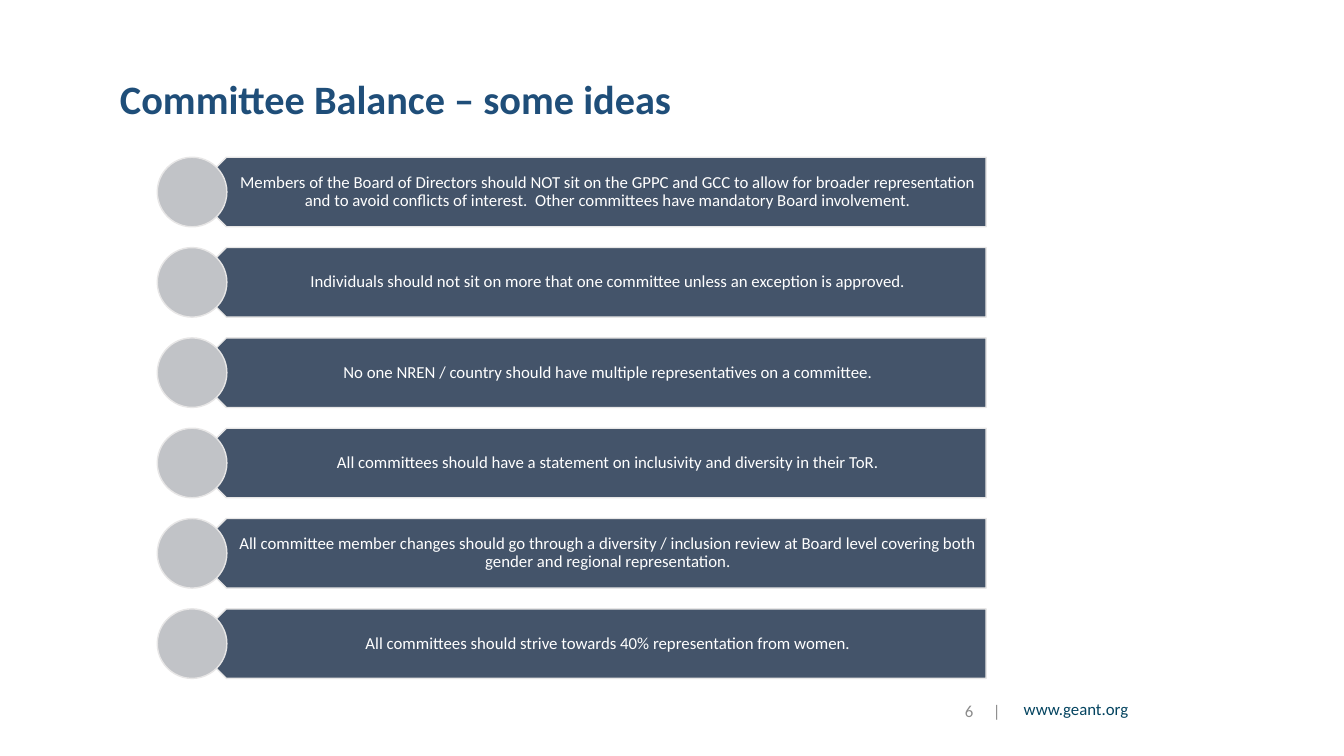
"""Build the committee balance slide: six ideas, each on a dark plate with a round marker."""
from dataclasses import dataclass

from lxml.etree import SubElement
from pptx import Presentation
from pptx.dml.color import RGBColor
from pptx.enum.shapes import MSO_SHAPE
from pptx.enum.text import MSO_ANCHOR, MSO_AUTO_SIZE, PP_ALIGN
from pptx.oxml.ns import qn
from pptx.util import Inches, Pt

TITLE = "Committee Balance – some ideas"
IDEAS = [
    "Members of the Board of Directors should NOT sit on the GPPC and GCC to allow for broader "
    "representation and to avoid conflicts of interest.  Other committees have mandatory Board involvement.",
    "Individuals should not sit on more that one committee unless an exception is approved.",
    "No one NREN / country should have multiple representatives on a committee.",
    "All committees should have a statement on inclusivity and diversity in their ToR.",
    "All committee member changes should go through a diversity / inclusion review at Board level "
    "covering both gender and regional representation.",
    "All committees should strive towards 40% representation from women.",
]
WEBSITE = "www.geant.org"
PAGE = "6\t|"
PAGE_TAB = 0.28


@dataclass(frozen=True)
class Theme:
    font: str = "Calibri"
    title: str = "1F4E79"
    plate: str = "44546A"
    marker: str = "C1C3C7"
    outline: str = "E7E6E6"
    idea: str = "FFFFFF"
    website: str = "03435F"
    page: str = "8C8C8C"
    title_size: float = 28.8
    text_size: float = 12


THEME = Theme()
FIRST_TOP, LAST_TOP = 1.56, 6.04
PITCH = (LAST_TOP - FIRST_TOP) / (len(IDEAS) - 1)
ROW_H = 0.69
MARKER_X, PLATE_X, IDEA_X, RIGHT = 1.56, 1.9, 2.07, 9.78


def write(tf, text, color, align, size=THEME.text_size, bold=False, spacing=0.9):
    tf.word_wrap = True
    tf.auto_size = MSO_AUTO_SIZE.NONE
    p = tf.paragraphs[0]
    p.alignment = align
    p.line_spacing = spacing
    r = p.add_run()
    r.text = text
    r.font.name = THEME.font
    r.font.size = Pt(size)
    r.font.bold = bold
    r.font.color.rgb = RGBColor.from_string(color)
    return p


def add_text(s, box, text, color, align, anchor=MSO_ANCHOR.MIDDLE, spacing=0.9):
    tb = s.shapes.add_textbox(*map(Inches, box))
    tb.text_frame.vertical_anchor = anchor
    write(tb.text_frame, text, color, align, spacing=spacing)
    return tb.text_frame


def add_outlined(s, kind, box, fill):
    sp = s.shapes.add_shape(kind, *map(Inches, box))
    sp.shadow.inherit = False
    sp.fill.solid()
    sp.fill.fore_color.rgb = RGBColor.from_string(fill)
    sp.line.color.rgb = RGBColor.from_string(THEME.outline)
    sp.line.width = Pt(1)
    return sp


def add_idea(s, top, text):
    plate = add_outlined(s, MSO_SHAPE.PENTAGON, (PLATE_X, top, RIGHT - PLATE_X, ROW_H), THEME.plate)
    plate.rotation = 180
    tf = add_text(s, (IDEA_X, top, RIGHT - IDEA_X, ROW_H), text, THEME.idea, PP_ALIGN.CENTER)
    tf.margin_left, tf.margin_right = Inches(0.3), Inches(0.09)
    add_outlined(s, MSO_SHAPE.OVAL, (MARKER_X, top, ROW_H, ROW_H), THEME.marker)


def add_title(s):
    title = s.shapes.title
    title.left, title.top, title.width, title.height = map(Inches, (1.09, 0.77, 10.82, 0.47))
    title.text_frame.vertical_anchor = MSO_ANCHOR.MIDDLE
    write(title.text_frame, TITLE, THEME.title, PP_ALIGN.LEFT, THEME.title_size, True)


def add_footer(s):
    add_text(s, (9.61, 6.91, 1.68, 0.37), WEBSITE, THEME.website, PP_ALIGN.RIGHT, MSO_ANCHOR.TOP)
    tf = add_text(s, (9.47, 6.87, 0.55, 0.36), PAGE, THEME.page, PP_ALIGN.LEFT, spacing=1.0)
    tf.margin_right = 0
    tabs = SubElement(tf.paragraphs[0]._p.get_or_add_pPr(), qn("a:tabLst"))
    SubElement(tabs, qn("a:tab"), pos=str(Inches(PAGE_TAB)), algn="l")


def main():
    prs = Presentation()
    prs.slide_width, prs.slide_height = Inches(13.33), Inches(7.5)
    s = prs.slides.add_slide(prs.slide_layouts[5])
    add_title(s)
    for i, text in enumerate(IDEAS):
        add_idea(s, FIRST_TOP + i * PITCH, text)
    add_footer(s)
    prs.save("out.pptx")


if __name__ == "__main__":
    main()
